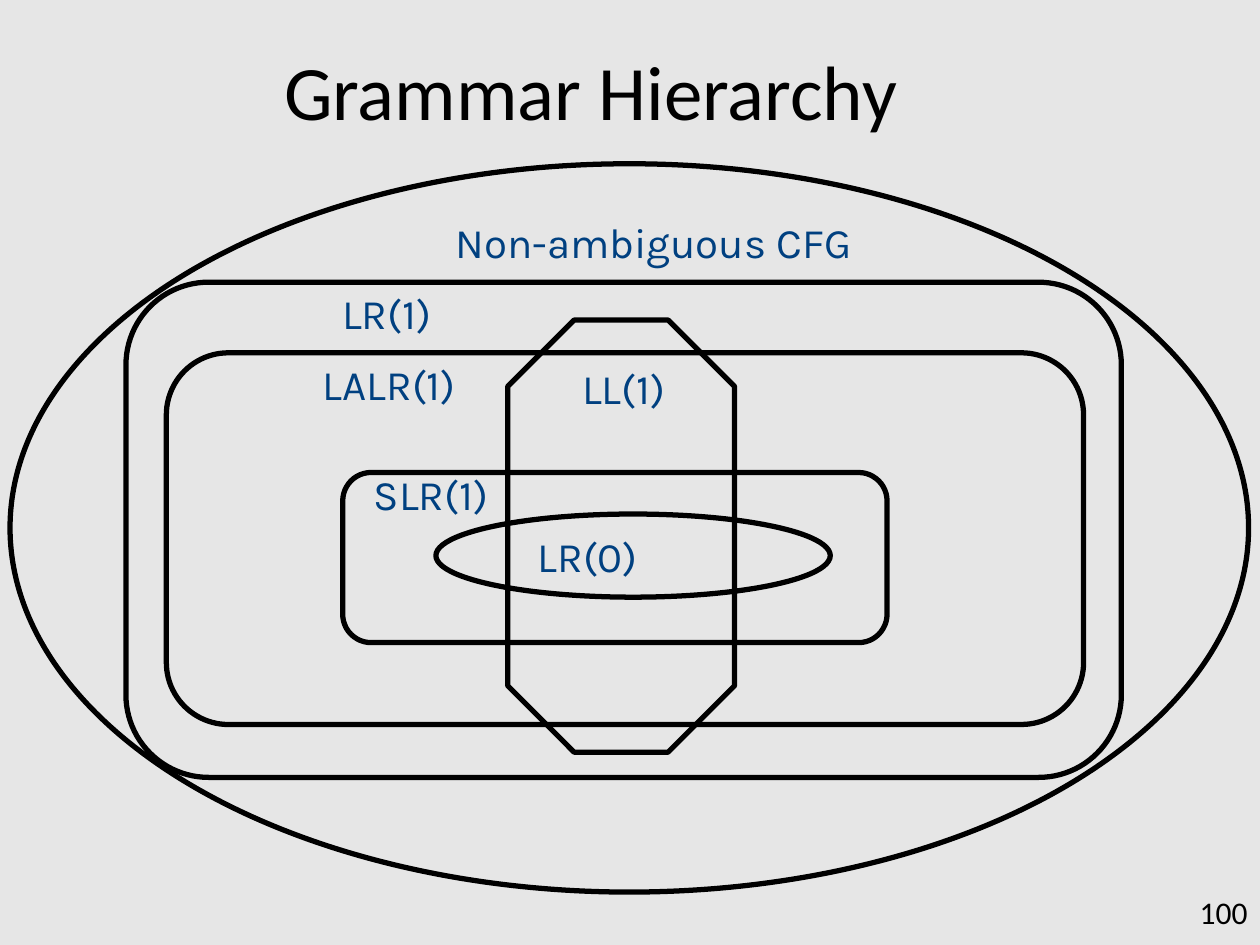
from pptx import Presentation
from pptx.dml.color import RGBColor
from pptx.enum.shapes import MSO_SHAPE
from pptx.enum.text import MSO_ANCHOR, PP_ALIGN
from pptx.util import Inches, Pt

BLACK = RGBColor(0x00, 0x00, 0x00)
BLUE = RGBColor(0x00, 0x40, 0x80)
LIGHT_GRAY = RGBColor(0xE6, 0xE6, 0xE6)
ELLIPSE = MSO_SHAPE.OVAL
ROUNDED = MSO_SHAPE.ROUNDED_RECTANGLE
OCTAGON = MSO_SHAPE.OCTAGON
CENTER = PP_ALIGN.CENTER
RIGHT = PP_ALIGN.RIGHT
TOP = MSO_ANCHOR.TOP
MIDDLE = MSO_ANCHOR.MIDDLE

COLUMNS, ROWS = 100, 75
CORNERS = {ELLIPSE: None, ROUNDED: 0.167, OCTAGON: 0.293}
LABEL_WIDTH, LABEL_HEIGHT = 31.8, 5


class HierarchySlide:
    heading_font = "Calibri"
    label_font = "Karla"
    outline_width = Pt(3)

    def __init__(self, presentation):
        self.column = presentation.slide_width / COLUMNS
        self.row = presentation.slide_height / ROWS
        self.slide = presentation.slides.add_slide(presentation.slide_layouts[5])
        background = self.slide.background.fill
        background.solid()
        background.fore_color.rgb = LIGHT_GRAY

    def place(self, left, top, width, height):
        return (round(left * self.column), round(top * self.row),
                round(width * self.column), round(height * self.row))

    def add_text(self, shape, text, font, size, color, alignment, anchor=TOP):
        frame = shape.text_frame
        frame.word_wrap = True
        frame.vertical_anchor = anchor
        paragraph = frame.paragraphs[0]
        paragraph.alignment = alignment
        run = paragraph.add_run()
        run.text = text
        run.font.name = font
        run.font.size = Pt(size)
        run.font.color.rgb = color

    def title(self, text, *box):
        title = self.slide.shapes.title
        title.left, title.top, title.width, title.height = self.place(*box)
        self.add_text(title, text, self.heading_font, 44, BLACK, CENTER, MIDDLE)

    def page_number(self, text, *box):
        number = self.slide.shapes.add_textbox(*self.place(*box))
        self.add_text(number, text, self.heading_font, 18, BLACK, RIGHT)

    def region(self, kind, *box):
        region = self.slide.shapes.add_shape(kind, *self.place(*box))
        region.shadow.inherit = False
        region.fill.background()
        region.line.color.rgb = BLACK
        region.line.width = self.outline_width
        if CORNERS[kind]:
            region.adjustments[0] = CORNERS[kind]

    def label(self, text, left, top, width=LABEL_WIDTH, height=LABEL_HEIGHT):
        label = self.slide.shapes.add_textbox(*self.place(left, top, width, height))
        self.add_text(label, text, self.label_font, 24, BLUE, CENTER)


def main():
    presentation = Presentation()
    presentation.slide_width = Inches(10)
    presentation.slide_height = Inches(7.5)

    hierarchy = HierarchySlide(presentation)
    hierarchy.title("Grammar Hierarchy", 4.4, 1.7, 85, 10.8)
    hierarchy.page_number("100", 79.2, 70.4, 20.8, 3)

    grammars = [
        (ELLIPSE, (0.8, 13, 98.3, 57.8), "Non-ambiguous CFG", (31.2, 16.7, 41.3)),
        (ROUNDED, (10, 22.4, 79, 39.3), "LR(1)", (14.8, 22.3)),
        (ROUNDED, (13.2, 28, 72.8, 29.5), "LALR(1)", (15, 28)),
        (ROUNDED, (27.2, 37.5, 43.2, 13.5), "SLR(1)", (18.3, 36.7)),
        (OCTAGON, (40.3, 25.4, 18, 34.3), "LL(1)", (33.6, 28.3)),
        (ELLIPSE, (34.6, 40.8, 31.3, 6.6), "LR(0)", (41.5, 41.6, 10.3, 4)),
    ]
    for kind, region_box, name, label_box in grammars:
        hierarchy.region(kind, *region_box)
        hierarchy.label(name, *label_box)

    presentation.save("out.pptx")


if __name__ == "__main__":
    main()
